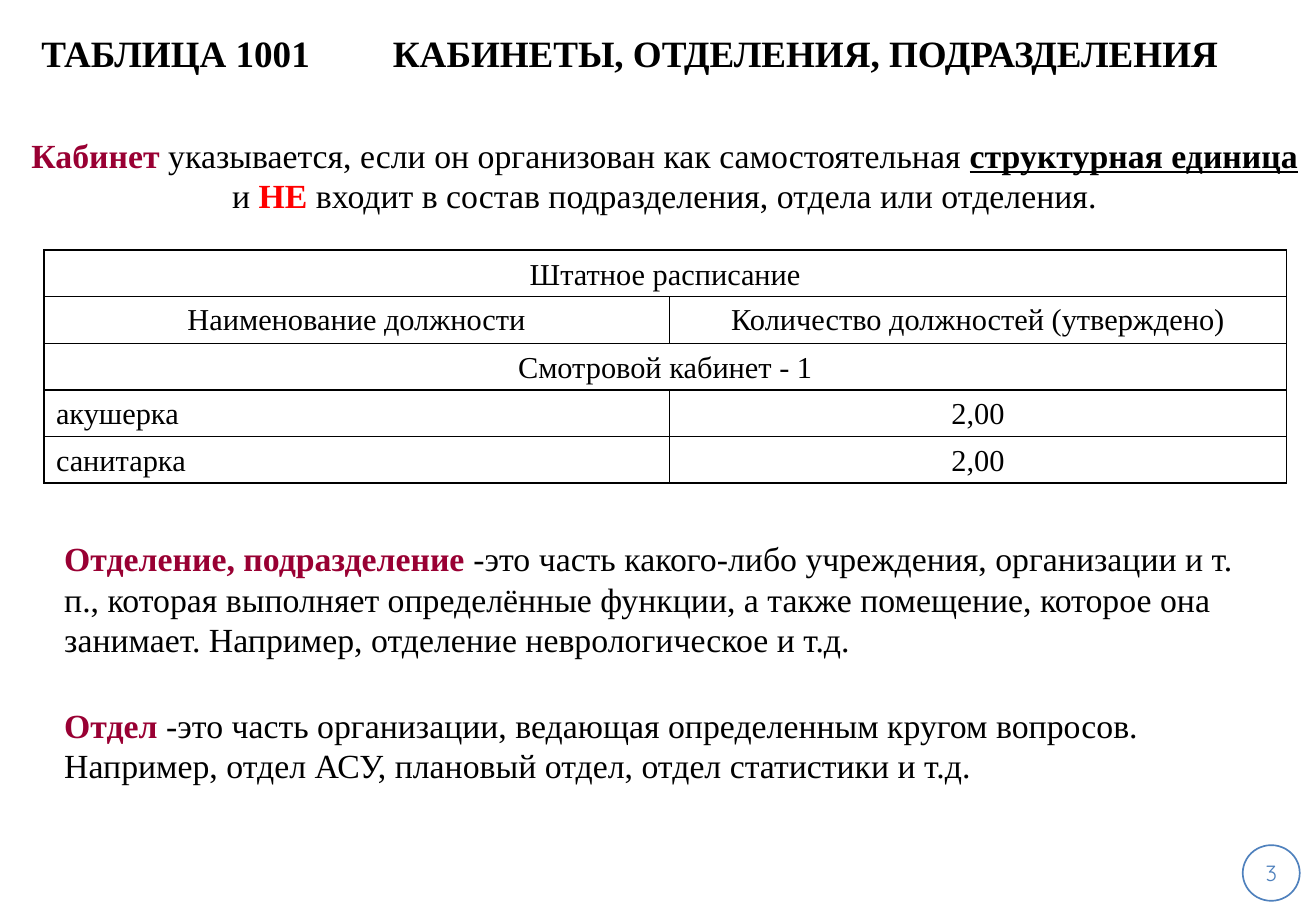
from lxml.etree import SubElement
from pptx import Presentation
from pptx.dml.color import RGBColor
from pptx.enum.shapes import MSO_SHAPE
from pptx.enum.text import MSO_ANCHOR, PP_ALIGN
from pptx.oxml.ns import qn
from pptx.util import Pt

COLORS = {"text": "000000", "term": "990033", "warning": "FF0000",
          "number": "4F81BD", "paper": "FFFFFF"}
SERIF = "Times New Roman"
STAFF_ROWS = [
    ("Штатное расписание",),
    ("Наименование должности", "Количество должностей (утверждено)"),
    ("Смотровой кабинет - 1",),
    ("акушерка", "2,00"),
    ("санитарка", "2,00"),
]


def color(name):
    """Return the named colour."""
    return RGBColor.from_string(COLORS[name])


def set_font(paragraph, size, name=SERIF, color_name="text", bold=False):
    """Set the font shared by a whole paragraph."""
    font = paragraph.font
    font.name, font.size, font.bold = name, Pt(size), bold
    font.color.rgb = color(color_name)


def add_text_box(slide, left, top, width, height):
    """Add a wrapping text box and return its text frame."""
    frame = slide.shapes.add_textbox(Pt(left), Pt(top), Pt(width), Pt(height)).text_frame
    frame.word_wrap = True
    return frame


def add_title(slide, number, subject):
    """Add the heading with its subject at a tab stop."""
    frame = add_text_box(slide, 24.5, 0, 740, 62)
    frame.margin_left = 0
    frame.vertical_anchor = MSO_ANCHOR.MIDDLE
    paragraph = frame.paragraphs[0]
    paragraph.text = f"{number}\t{subject}"
    tabs = SubElement(paragraph._p.get_or_add_pPr(), qn("a:tabLst"))
    SubElement(tabs, qn("a:tab"), pos=str(Pt(208.4)), algn="l")
    set_font(paragraph, 22, bold=True)


def add_definition(slide, left, top, width, height, paragraphs, alignment=PP_ALIGN.LEFT):
    """Add paragraphs made of (text, style) pieces."""
    frame = add_text_box(slide, left, top, width, height)
    for index, pieces in enumerate(paragraphs):
        paragraph = frame.add_paragraph() if index else frame.paragraphs[0]
        paragraph.alignment = alignment
        set_font(paragraph, 20)
        for text, style in pieces:
            run = paragraph.add_run()
            run.text = text
            if style != "text":
                run.font.bold = True
            if style == "underlined":
                run.font.underline = True
            elif style != "text":
                run.font.color.rgb = color(style)


def add_borders(cell):
    """Draw thin lines on all four sides of a cell."""
    properties = cell._tc.get_or_add_tcPr()
    for index, side in enumerate(("lnL", "lnR", "lnT", "lnB")):
        line = properties.makeelement(qn(f"a:{side}"), {"w": str(Pt(1))})
        fill = SubElement(line, qn("a:solidFill"))
        SubElement(fill, qn("a:srgbClr"), val=COLORS["text"])
        properties.insert(index, line)


def add_staff_table(slide):
    """Add the staffing table, merging the single-entry rows."""
    row_height = 27.25
    table = slide.shapes.add_table(len(STAFF_ROWS), 2, Pt(26), Pt(148.3), Pt(736.6),
                                   Pt(row_height * len(STAFF_ROWS))).table
    table.first_row = table.horz_banding = False
    for column, width in zip(table.columns, (370.8, 365.8)):
        column.width = Pt(width)
    for row_index, entries in enumerate(STAFF_ROWS):
        table.rows[row_index].height = Pt(row_height)
        for column_index in range(2):
            cell = table.cell(row_index, column_index)
            cell.fill.solid()
            cell.fill.fore_color.rgb = color("paper")
            cell.margin_top = cell.margin_bottom = Pt(3)
            cell.vertical_anchor = MSO_ANCHOR.MIDDLE if row_index == 1 else MSO_ANCHOR.BOTTOM
            add_borders(cell)
            if column_index < len(entries):
                paragraph = cell.text_frame.paragraphs[0]
                paragraph.text = entries[column_index]
                is_position = row_index > 2 and column_index == 0
                paragraph.alignment = PP_ALIGN.LEFT if is_position else PP_ALIGN.CENTER
                set_font(paragraph, 18)
        if len(entries) == 1:
            table.cell(row_index, 0).merge(table.cell(row_index, 1))


def add_page_number(slide, number):
    """Add the circled page number."""
    shape = slide.shapes.add_shape(MSO_SHAPE.OVAL, Pt(736.6), Pt(501), Pt(33.8), Pt(33))
    shape.shadow.inherit = False
    shape.fill.background()
    shape.line.color.rgb = color("number")
    shape.line.width = Pt(1)
    frame = shape.text_frame
    frame.margin_left = frame.margin_right = frame.margin_top = frame.margin_bottom = 0
    frame.vertical_anchor = MSO_ANCHOR.MIDDLE
    paragraph = frame.paragraphs[0]
    paragraph.text = number
    paragraph.alignment = PP_ALIGN.CENTER
    set_font(paragraph, 13, "Quicksand", "number")


def main():
    """Build the slide and save it."""
    presentation = Presentation()
    presentation.slide_width, presentation.slide_height = Pt(780), Pt(540)
    slide = presentation.slides.add_slide(presentation.slide_layouts[6])
    add_page_number(slide, "3")
    add_title(slide, "ТАБЛИЦА 1001", "КАБИНЕТЫ, ОТДЕЛЕНИЯ, ПОДРАЗДЕЛЕНИЯ")
    add_staff_table(slide)
    add_definition(slide, 31, 315.4, 714, 80, [[
        ("Отделение, подразделение ", "term"),
        ("-это часть какого-либо учреждения, организации и т. п., которая выполняет "
         "определённые функции, а также помещение, которое она занимает. "
         "Например, отделение неврологическое и т.д.", "text")]])
    add_definition(slide, 8, 76.3, 772, 55.4, [[
        ("Кабинет ", "term"),
        ("указывается, если он организован как самостоятельная ", "text"),
        ("структурная единица", "underlined"),
        (" и ", "text"),
        ("НЕ ", "warning"),
        ("входит в состав подразделения, отдела или отделения.", "text")]],
        PP_ALIGN.CENTER)
    add_definition(slide, 31, 414, 664, 55.4, [
        [("Отдел", "term"),
         (" -это часть организации, ведающая определенным кругом вопросов.", "text")],
        [("Например, отдел АСУ, плановый отдел, отдел статистики и т.д.", "text")]])
    presentation.save("out.pptx")


if __name__ == "__main__":
    main()
